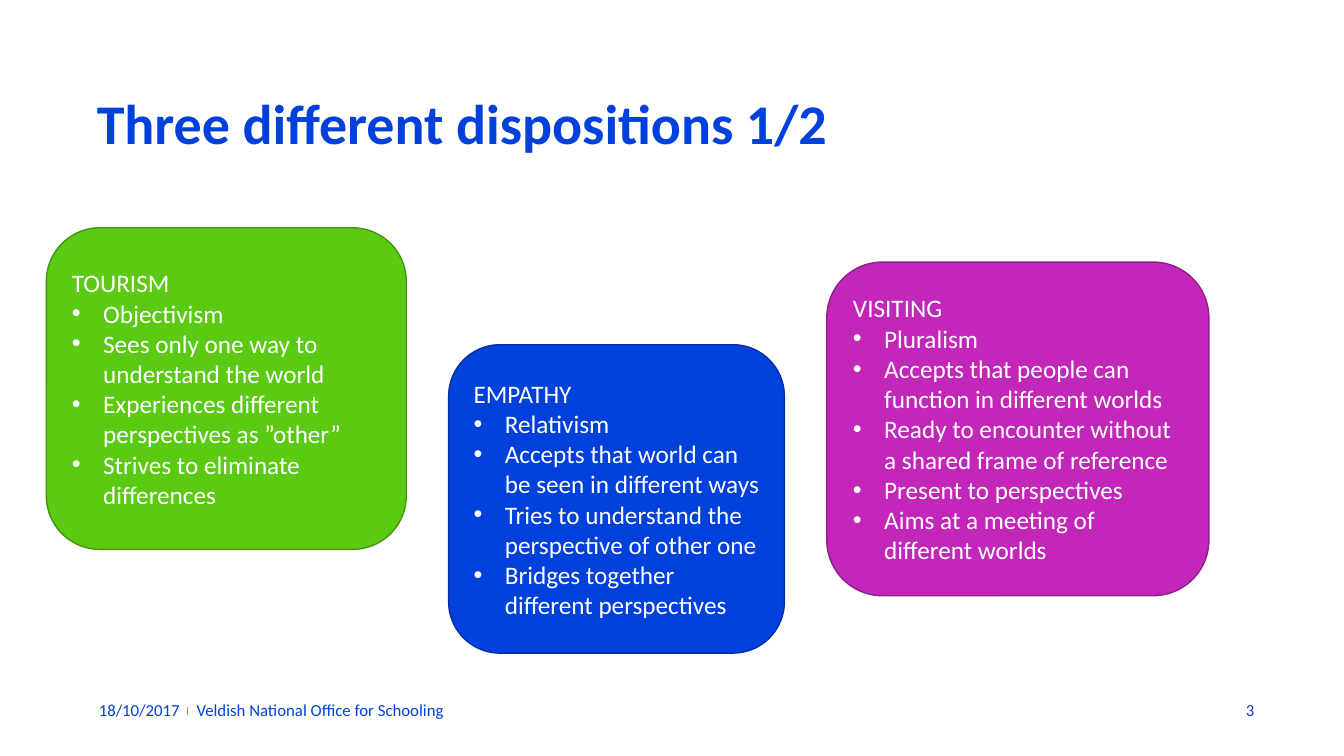
from lxml import etree
from pptx import Presentation
from pptx.dml.color import RGBColor
from pptx.enum import shapes, text
from pptx.oxml import ns
from pptx.util import Inches, Pt

FONT = "Calibri"
WHITE = RGBColor(0xFF, 0xFF, 0xFF)
BLUE = RGBColor(0x00, 0x41, 0xDC)
DARK_BLUE = RGBColor(0x00, 0x30, 0xA3)
GREEN = RGBColor(0x5B, 0xCA, 0x13)
DARK_GREEN = RGBColor(0x43, 0x95, 0x0E)
PURPLE = RGBColor(0xC2, 0x27, 0xB9)
DARK_PURPLE = RGBColor(0x90, 0x1D, 0x89)

# Position and size, fill, outline, heading, points
DISPOSITIONS = [
    ((0.46, 2.26, 3.57, 3.19), GREEN, DARK_GREEN, "TOURISM", [
        "Objectivism",
        "Sees only one way to understand the world",
        "Experiences different perspectives as ”other”",
        "Strives to eliminate differences",
    ]),
    ((4.45, 3.42, 3.33, 3.06), BLUE, DARK_BLUE, "EMPATHY", [
        "Relativism",
        "Accepts that world can be seen in different ways",
        "Tries to understand the perspective of other one",
        "Bridges together different perspectives",
    ]),
    ((8.2, 2.6, 3.79, 3.31), PURPLE, DARK_PURPLE, "VISITING", [
        "Pluralism",
        "Accepts that people can function in different worlds",
        "Ready to encounter without a shared frame of reference",
        "Present to perspectives",
        "Aims at a meeting of different worlds",
    ]),
]


def write(para, words, size, color, bold=False, align=text.PP_ALIGN.LEFT):
    para.alignment = align
    span = para.add_run()
    span.text = words
    span.font.name = FONT
    span.font.size = Pt(size)
    span.font.bold = bold
    span.font.color.rgb = color


def add_bullet(para):
    properties = para._p.get_or_add_pPr()
    indent = Inches(0.31)
    properties.set("marL", str(indent))
    properties.set("indent", str(-indent))
    etree.SubElement(properties, ns.qn("a:buFont")).set("typeface", "Arial")
    etree.SubElement(properties, ns.qn("a:buChar")).set("char", "•")


def set_title(page, words):
    title = page.shapes.title
    title.left, title.top = Inches(0.86), Inches(0.9)
    title.width, title.height = Inches(11.5), Inches(0.94)
    frame = title.text_frame
    frame.vertical_anchor = text.MSO_ANCHOR.TOP
    para = frame.paragraphs[0]
    para.line_spacing = 0.9
    write(para, words, 40, BLUE, bold=True)


def add_disposition(page, bounds, fill, outline, heading, points):
    box = page.shapes.add_shape(
        shapes.MSO_SHAPE.ROUNDED_RECTANGLE, *map(Inches, bounds))
    box.shadow.inherit = False
    box.fill.solid()
    box.fill.fore_color.rgb = fill
    box.line.color.rgb = outline
    box.line.width = Pt(1)
    frame = box.text_frame
    frame.word_wrap = True
    frame.vertical_anchor = text.MSO_ANCHOR.MIDDLE
    write(frame.paragraphs[0], heading, 18, WHITE)
    for point in points:
        para = frame.add_paragraph()
        write(para, point, 18, WHITE)
        add_bullet(para)


def add_footer_text(page, left, width, words, align=text.PP_ALIGN.LEFT):
    box = page.shapes.add_textbox(
        Inches(left), Inches(6.9), Inches(width), Inches(0.29))
    frame = box.text_frame
    frame.word_wrap = True
    frame.vertical_anchor = text.MSO_ANCHOR.MIDDLE
    frame.margin_left = frame.margin_right = 0
    frame.margin_top = frame.margin_bottom = 0
    write(frame.paragraphs[0], words, 12, BLUE, align=align)


def add_footer_divider(page):
    divider = page.shapes.add_connector(
        shapes.MSO_CONNECTOR.STRAIGHT,
        Inches(1.86), Inches(7.01), Inches(1.86), Inches(7.09))
    divider.line.color.rgb = GREEN
    divider.line.width = Pt(1.25)
    etree.SubElement(divider._element.spPr, ns.qn("a:effectLst"))


def main():
    deck = Presentation()
    deck.slide_width, deck.slide_height = Inches(13.33), Inches(7.5)
    page = deck.slides.add_slide(deck.slide_layouts.get_by_name("Title Only"))
    set_title(page, "Three different dispositions 1/2")
    add_footer_divider(page)
    add_footer_text(page, 0.98, 0.97, "18/10/2017")
    add_footer_text(page, 1.95, 4.73, "Veldish National Office for Schooling")
    add_footer_text(page, 11.54, 0.9, "3", align=text.PP_ALIGN.RIGHT)
    for disposition in DISPOSITIONS:
        add_disposition(page, *disposition)
    deck.save("out.pptx")


if __name__ == "__main__":
    main()
